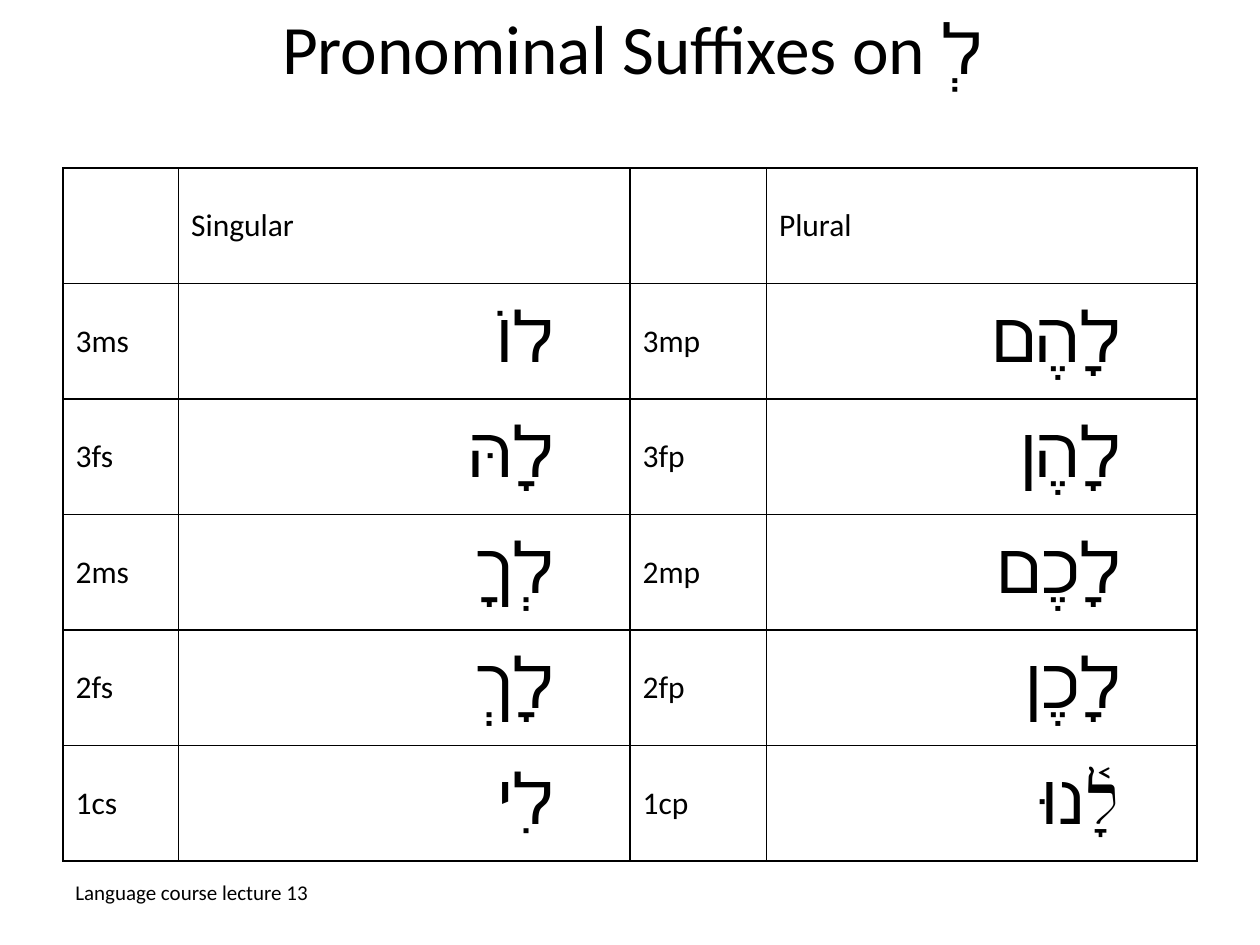
"""Build a slide charting the pronominal suffixes on the Hebrew preposition lamed."""
import dataclasses

import lxml.etree
import pptx
import pptx.dml.color
import pptx.enum.text
import pptx.oxml
import pptx.oxml.ns
import pptx.util

Cm = pptx.util.Cm
Align = pptx.enum.text.PP_ALIGN
Anchor = pptx.enum.text.MSO_ANCHOR
AutoSize = pptx.enum.text.MSO_AUTO_SIZE
BLACK = pptx.dml.color.RGBColor(0x00, 0x00, 0x00)
FONT = "Calibri"
COLUMN_WIDTHS = (2.33, 9.1, 2.75, 8.68)
TABLE_HEIGHT = 13.97


@dataclasses.dataclass(frozen=True)
class Form:
    """A parsing label with its Hebrew form."""
    label: str
    hebrew: str


SINGULAR = (
    Form("3ms", "לוֹ"),
    Form("3fs", "לָהּ"),
    Form("2ms", "לְךָ"),
    Form("2fs", "לָךְ"),
    Form("1cs", "לִי"),
)
PLURAL = (
    Form("3mp", "לָהֶם"),
    Form("3fp", "לָהֶן"),
    Form("2mp", "לָכֶם"),
    Form("2fp", "לָכֶן"),
    Form("1cp", "לָ֫נוּ"),
)


def add_child(parent, tag: str, **attributes: str):
    return lxml.etree.SubElement(parent, pptx.oxml.ns.qn(tag), **attributes)


def write_text(frame, text: str, *, size: float = 18, align=None, rtl: bool = False) -> None:
    para = frame.paragraphs[0]
    para.alignment = align
    if rtl:
        properties = para._p.get_or_add_pPr()
        properties.set("rtl", "1")
        tabs = add_child(properties, "a:tabLst")
        add_child(tabs, "a:tab", pos=str(Cm(1.27)), algn="r")
    span = para.add_run()
    span.text = text
    span.font.name = FONT
    span.font.size = pptx.util.Pt(size)
    span.font.color.rgb = BLACK


def format_cell(cell) -> None:
    properties = cell._tc.get_or_add_tcPr()
    for side in ("a:lnL", "a:lnR", "a:lnT", "a:lnB"):
        line = add_child(properties, side, w=str(pptx.util.Pt(1)))
        fill = add_child(line, "a:solidFill")
        add_child(fill, "a:srgbClr", val=str(BLACK))
    cell.fill.background()
    cell.vertical_anchor = Anchor.MIDDLE


def write_forms(table, column: int, heading: str, forms: tuple[Form, ...]) -> None:
    write_text(table.cell(0, column + 1).text_frame, heading)
    for row, form in enumerate(forms, start=1):
        write_text(table.cell(row, column).text_frame, form.label)
        write_text(table.cell(row, column + 1).text_frame, "\t" + form.hebrew,
                   size=40, align=Align.RIGHT, rtl=True)


def add_suffix_table(page) -> None:
    row_count = len(SINGULAR) + 1
    table = page.shapes.add_table(row_count, len(COLUMN_WIDTHS), Cm(1.27), Cm(3.39),
                                  Cm(sum(COLUMN_WIDTHS)), Cm(TABLE_HEIGHT)).table
    table.first_row = False
    table.horz_banding = False
    for column, width in zip(table.columns, COLUMN_WIDTHS):
        column.width = Cm(width)
    for row in table.rows:
        row.height = Cm(TABLE_HEIGHT / row_count)
    for cell in table.iter_cells():
        format_cell(cell)
    write_forms(table, 0, "Singular", SINGULAR)
    write_forms(table, 2, "Plural", PLURAL)


def main() -> None:
    deck = pptx.Presentation()
    deck.slide_width, deck.slide_height = Cm(25.4), Cm(19.05)
    page = deck.slides.add_slide(deck.slide_layouts[5])

    title = page.shapes.title
    title.left, title.top, title.width, title.height = Cm(1.32), Cm(0), Cm(22.86), Cm(1.9)
    title.text_frame.auto_size = AutoSize.NONE
    title.text_frame.vertical_anchor = Anchor.MIDDLE
    write_text(title.text_frame, "Pronominal Suffixes on לְ", size=39.6, align=Align.CENTER)

    add_suffix_table(page)

    footer = page.shapes.add_textbox(Cm(1.27), Cm(17.6), Cm(22.86), Cm(0.77))
    footer.text_frame.word_wrap = True
    footer.text_frame.auto_size = AutoSize.SHAPE_TO_FIT_TEXT
    write_text(footer.text_frame, "Language course lecture 13", size=12)

    deck.save("out.pptx")


if __name__ == "__main__":
    main()
